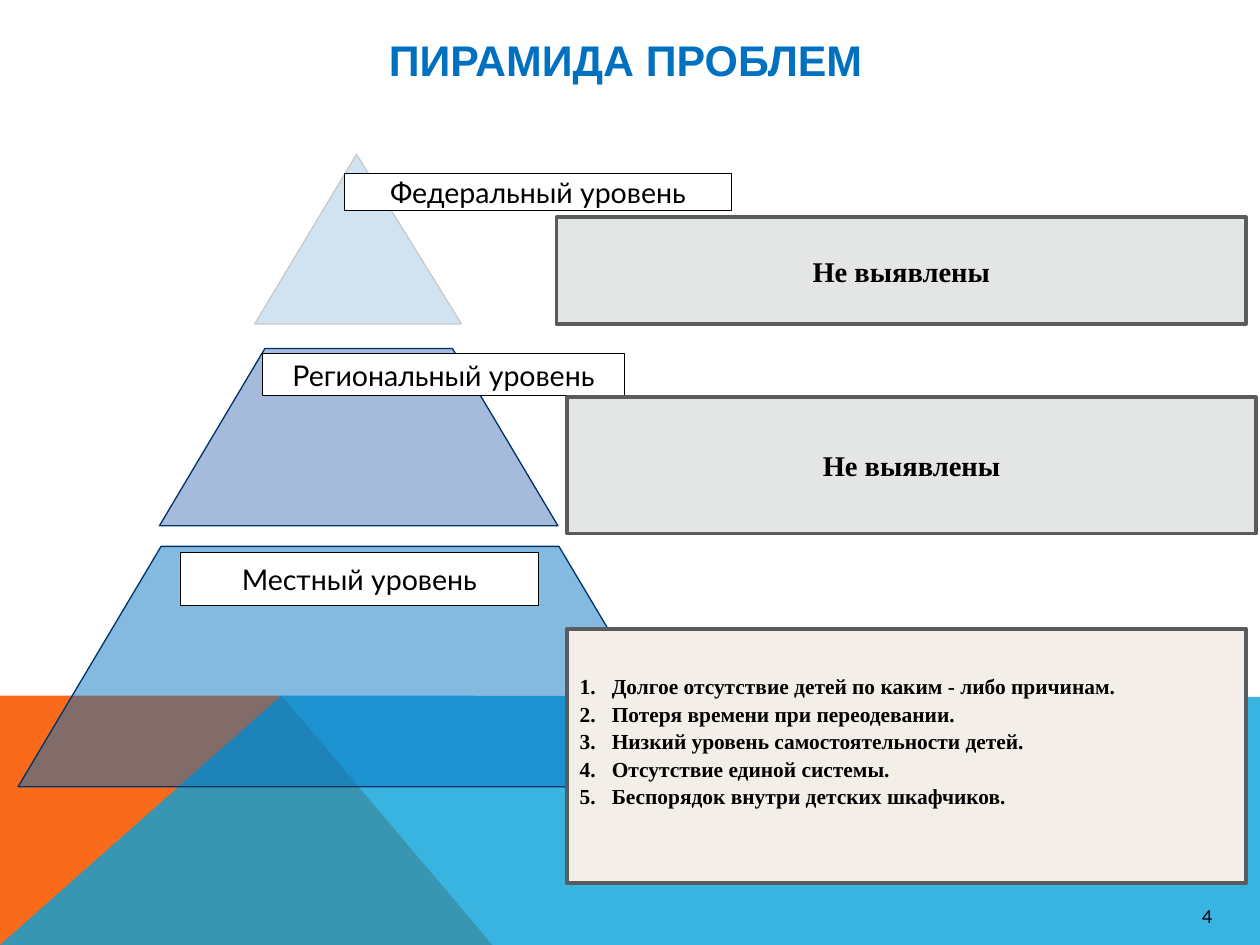
from dataclasses import dataclass
from typing import Optional

from lxml.etree import SubElement
from pptx import Presentation
from pptx.dml.color import RGBColor
from pptx.enum.shapes import MSO_SHAPE as Preset
from pptx.enum.text import MSO_ANCHOR as Anchor, PP_ALIGN as Align
from pptx.oxml.ns import qn
from pptx.util import Inches, Pt

COLORS = {
    "orange": "F96A1B",
    "sky": "08A1D9",
    "title": "0070C0",
    "local": "0070C0",
    "regional": "4770B5",
    "federal": "327FBE",
    "navy": "003366",
    "silver": "C9CACB",
    "white": "FFFFFF",
    "black": "000000",
    "gray": "E4E5E5",
    "cream": "F3EFE8",
    "frame": "5A5B5D",
}


@dataclass
class Box:
    left: float
    top: float
    width: float
    height: float


@dataclass
class Band:
    """A background area running along the bottom of the slide."""
    points: list[tuple[float, float]]
    color: str
    opacity: Optional[int] = None


@dataclass
class Level:
    """One tier of the pyramid with its label and its problems."""
    name: str
    problems: list[str]
    tier: Box
    label: Box
    panel: Box
    preset: Preset
    adjustment: float
    color: str
    opacity: int
    outline: str = "navy"
    panel_color: str = "gray"


BANDS = [
    Band([(0, 7.35), (0, 5.41), (2.19, 5.41), (3.83, 7.35)], "orange"),
    Band([(0, 7.35), (2.19, 5.41), (9.8, 5.42), (9.8, 7.35)], "sky", 80),
]

LEVELS = [
    Level(
        "Местный уровень",
        [
            "Долгое отсутствие детей по каким - либо причинам.",
            "Потеря времени при переодевании.",
            "Низкий уровень самостоятельности детей.",
            "Отсутствие единой системы.",
            "Беспорядок внутри детских шкафчиков.",
        ],
        Box(0.14, 4.25, 5.32, 1.87), Box(1.4, 4.3, 2.79, 0.41),
        Box(4.41, 4.89, 5.28, 1.98),
        Preset.TRAPEZOID, 0.595, "local", 48, panel_color="cream",
    ),
    Level(
        "Региональный уровень", ["Не выявлены"],
        Box(1.24, 2.71, 3.1, 1.38), Box(2.04, 2.75, 2.82, 0.33),
        Box(4.41, 3.09, 5.36, 1.06),
        Preset.TRAPEZOID, 0.595, "regional", 48,
    ),
    Level(
        "Федеральный уровень", ["Не выявлены"],
        Box(1.98, 1.2, 1.61, 1.32), Box(2.68, 1.35, 3.01, 0.29),
        Box(4.33, 1.69, 5.36, 0.83),
        Preset.ISOSCELES_TRIANGLE, 0.493, "federal", 22, outline="silver",
    ),
]


def rgb(name: str) -> RGBColor:
    return RGBColor.from_string(COLORS[name])


def place(box: Box) -> tuple:
    return tuple(Inches(v) for v in (box.left, box.top, box.width, box.height))


def paint(shape, color: str, opacity: Optional[int] = None) -> None:
    """Fill a shape, with opacity in percent, and drop its shadow."""
    shape.shadow.inherit = False
    shape.fill.solid()
    shape.fill.fore_color.rgb = rgb(color)
    if opacity is not None:
        fill_color = shape.fill._xPr.find(qn("a:solidFill"))[0]
        SubElement(fill_color, qn("a:alpha"), val=str(opacity * 1000))


def add_preset(slide, preset: Preset, box: Box, color: str, outline: str,
               line_width: float, opacity: Optional[int] = None):
    shape = slide.shapes.add_shape(preset, *place(box))
    paint(shape, color, opacity)
    shape.line.color.rgb = rgb(outline)
    shape.line.width = Pt(line_width)
    return shape


def write(shape, lines: list[str], font_name: str, size: float,
          bold: bool = False, color: str = "black",
          align: Align = Align.CENTER) -> None:
    frame = shape.text_frame
    frame.vertical_anchor = Anchor.MIDDLE
    frame.text = "\n".join(lines)
    for paragraph in frame.paragraphs:
        paragraph.alignment = align
        paragraph.font.name = font_name
        paragraph.font.size = Pt(size)
        paragraph.font.bold = bold
        paragraph.font.color.rgb = rgb(color)


def number_paragraphs(shape) -> None:
    """Turn the paragraphs into a numbered list with a hanging indent."""
    for paragraph in shape.text_frame.paragraphs:
        paragraph.line_spacing = 1.07
        properties = paragraph._p.get_or_add_pPr()
        properties.set("marL", str(Inches(0.25)))
        properties.set("indent", str(-Inches(0.25)))
        numbering = properties.makeelement(
            qn("a:buAutoNum"), {"type": "arabicPeriod"})
        properties.find(qn("a:defRPr")).addprevious(numbering)


def add_text(slide, text: str, box: Box, font_name: str, size: float,
             bold: bool = False, color: str = "black",
             align: Align = Align.CENTER, wrap: bool = True) -> None:
    text_box = slide.shapes.add_textbox(*place(box))
    frame = text_box.text_frame
    frame.word_wrap = wrap
    frame.margin_left = frame.margin_right = 0
    frame.margin_top = frame.margin_bottom = 0
    write(text_box, [text], font_name, size, bold, color, align)


def add_band(slide, band: Band) -> None:
    start, *others = [(Inches(x), Inches(y)) for x, y in band.points]
    builder = slide.shapes.build_freeform(*start)
    builder.add_line_segments(others, close=True)
    shape = builder.convert_to_shape()
    paint(shape, band.color, band.opacity)
    shape.line.fill.background()


def add_tier(slide, level: Level) -> None:
    tier = add_preset(slide, level.preset, level.tier, level.color,
                      level.outline, 0.75, level.opacity)
    tier.adjustments[0] = level.adjustment


def add_label(slide, level: Level) -> None:
    label = add_preset(slide, Preset.RECTANGLE, level.label, "white", "black", 0.5)
    write(label, [level.name], "Lato", 16)


def add_panel(slide, level: Level) -> None:
    panel = add_preset(slide, Preset.RECTANGLE, level.panel,
                       level.panel_color, "frame", 2)
    if len(level.problems) > 1:
        write(panel, level.problems, "Times New Roman", 12, True, align=Align.LEFT)
        number_paragraphs(panel)
        panel.text_frame.margin_bottom = Inches(0.29)
    else:
        write(panel, level.problems, "Times New Roman", 16, True)


def main() -> None:
    presentation = Presentation()
    presentation.slide_width = Inches(9.8)
    presentation.slide_height = Inches(7.35)
    slide = presentation.slides.add_slide(presentation.slide_layouts[6])

    for band in BANDS:
        add_band(slide, band)
    add_text(slide, "4", Box(9.35, 7.04, 0.23, 0.17), "Lato", 10,
             align=Align.LEFT, wrap=False)
    add_text(slide, "ПИРАМИДА ПРОБЛЕМ", Box(0.64, 0.26, 8.45, 0.4), "Arial", 24,
             bold=True, color="title")
    for add_part in (add_tier, add_label, add_panel):
        for level in LEVELS:
            add_part(slide, level)

    presentation.save("out.pptx")


if __name__ == "__main__":
    main()
